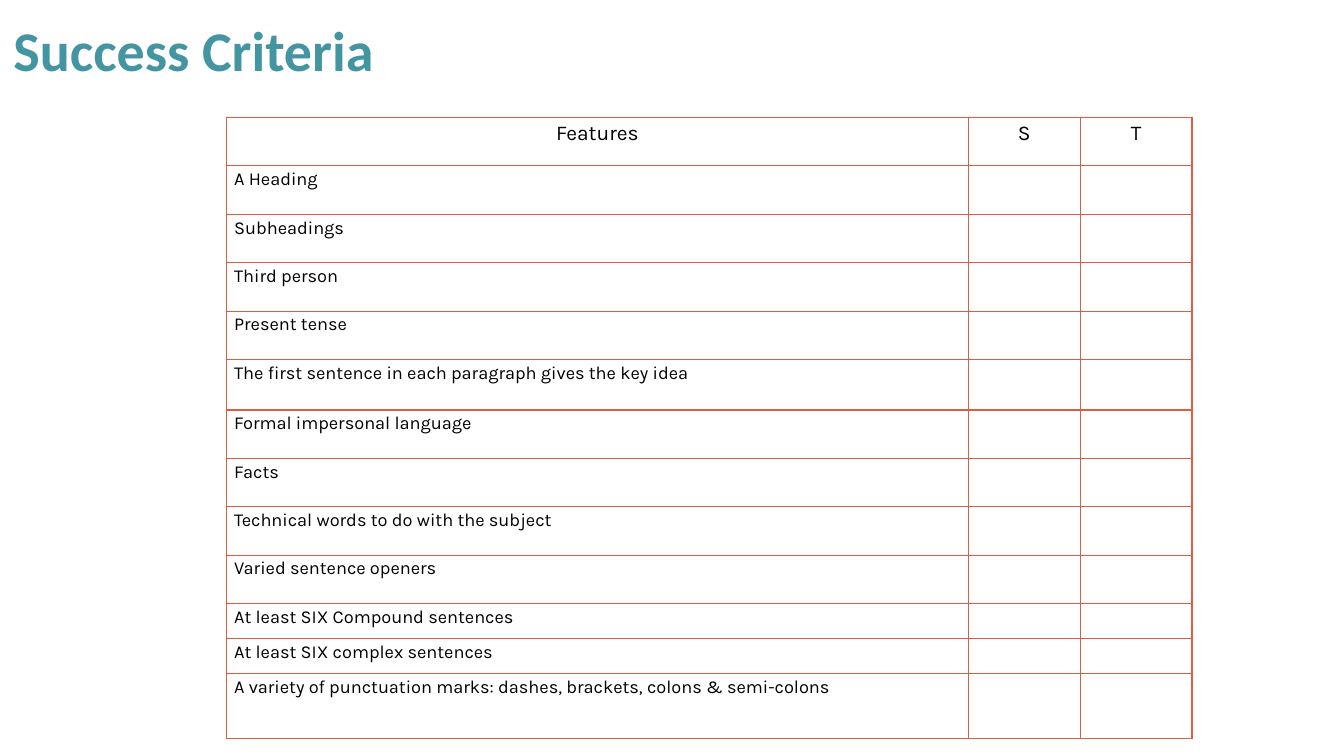
from lxml.etree import SubElement
from pptx import Presentation
from pptx.dml.color import RGBColor
from pptx.enum.text import MSO_ANCHOR, PP_ALIGN as AL
from pptx.oxml.ns import qn
from pptx.util import Cm, Pt

FEATURES = [
    "A Heading",
    "Subheadings",
    "Third person",
    "Present tense",
    "The first sentence in each paragraph gives the key idea",
    "Formal impersonal language",
    "Facts",
    "Technical words to do with the subject",
    "Varied sentence openers",
    "At least SIX Compound sentences",
    "At least SIX complex sentences",
    "A variety of punctuation marks: dashes, brackets, colons & semi-colons",
]
ROW_HEIGHTS = [1.22] * 5 + [1.27] + [1.22] * 4 + [0.88] * 2 + [1.64]
COL_WIDTHS = [18.69, 2.82, 2.82]


def rgb(value):
    return RGBColor.from_string(value)


def set_all(obj, **values):
    for name, value in values.items():
        setattr(obj, name, value)


class SlideBuilder:
    TITLE = dict(name="Calibri", size=Pt(40), bold=True)
    HEADER = dict(name="Karla", size=Pt(15), bold=False)
    BODY = dict(name="Karla", size=Pt(13), bold=False)
    CELL_PARAGRAPH = dict(line_spacing=1.15, space_before=Pt(4), space_after=Pt(4))
    TITLE_COLOR, TEXT_COLOR, BORDER_COLOR = "4495A2", "000000", "DF5D40"

    def __init__(self, slide):
        self.slide = slide

    def add_text(self, p, text, font, color):
        r = p.add_run()
        r.text = text
        set_all(r.font, **font)
        r.font.color.rgb = rgb(color)

    def title(self, text, left, top, width, height):
        sp = self.slide.shapes.add_textbox(Cm(left), Cm(top), Cm(width), Cm(height))
        tf = sp.text_frame
        set_all(tf, word_wrap=True, vertical_anchor=MSO_ANCHOR.TOP,
                margin_left=Cm(0.34), margin_right=Cm(0.34),
                margin_top=Cm(0.18), margin_bottom=Cm(0.18))
        self.add_text(tf.paragraphs[0], text, self.TITLE, self.TITLE_COLOR)

    def border(self, cell):
        """Draw a 1 pt line on all four sides of the cell."""
        tc_pr = cell._tc.get_or_add_tcPr()
        for i, side in enumerate(("a:lnL", "a:lnR", "a:lnT", "a:lnB")):
            ln = tc_pr.makeelement(qn(side), {"w": str(Pt(1))})
            fill = SubElement(ln, qn("a:solidFill"))
            SubElement(fill, qn("a:srgbClr"), val=self.BORDER_COLOR)
            tc_pr.insert(i, ln)

    def cell(self, cell, text, font, align):
        set_all(cell, margin_left=Cm(0.19), margin_right=Cm(0.19),
                margin_top=0, margin_bottom=0, vertical_anchor=MSO_ANCHOR.TOP)
        cell.fill.background()
        self.border(cell)
        if text:
            p = cell.text_frame.paragraphs[0]
            set_all(p, alignment=align, **self.CELL_PARAGRAPH)
            self.add_text(p, text, font, self.TEXT_COLOR)

    def table(self, rows, left, top, widths, heights):
        frame = self.slide.shapes.add_table(
            len(rows), len(widths), Cm(left), Cm(top),
            Cm(sum(widths)), Cm(sum(heights)))
        table = frame.table
        set_all(table, first_row=False, horz_banding=False)
        for column, width in zip(table.columns, widths):
            column.width = Cm(width)
        for i, (row, height) in enumerate(zip(rows, heights)):
            table.rows[i].height = Cm(height)
            font, align = (self.BODY, AL.LEFT) if i else (self.HEADER, AL.CENTER)
            for j, text in enumerate(row):
                self.cell(table.cell(i, j), text, font, align)


def main():
    prs = Presentation()
    set_all(prs, slide_width=Cm(33.87), slide_height=Cm(19.05))
    s = SlideBuilder(prs.slides.add_slide(prs.slide_layouts[6]))
    s.title("Success Criteria", 0, 0.2, 24.33, 2.74)
    rows = [("Features", "S", "T")] + [(feature, "", "") for feature in FEATURES]
    s.table(rows, 5.71, 2.96, COL_WIDTHS, ROW_HEIGHTS)
    prs.save("out.pptx")


if __name__ == "__main__":
    main()
